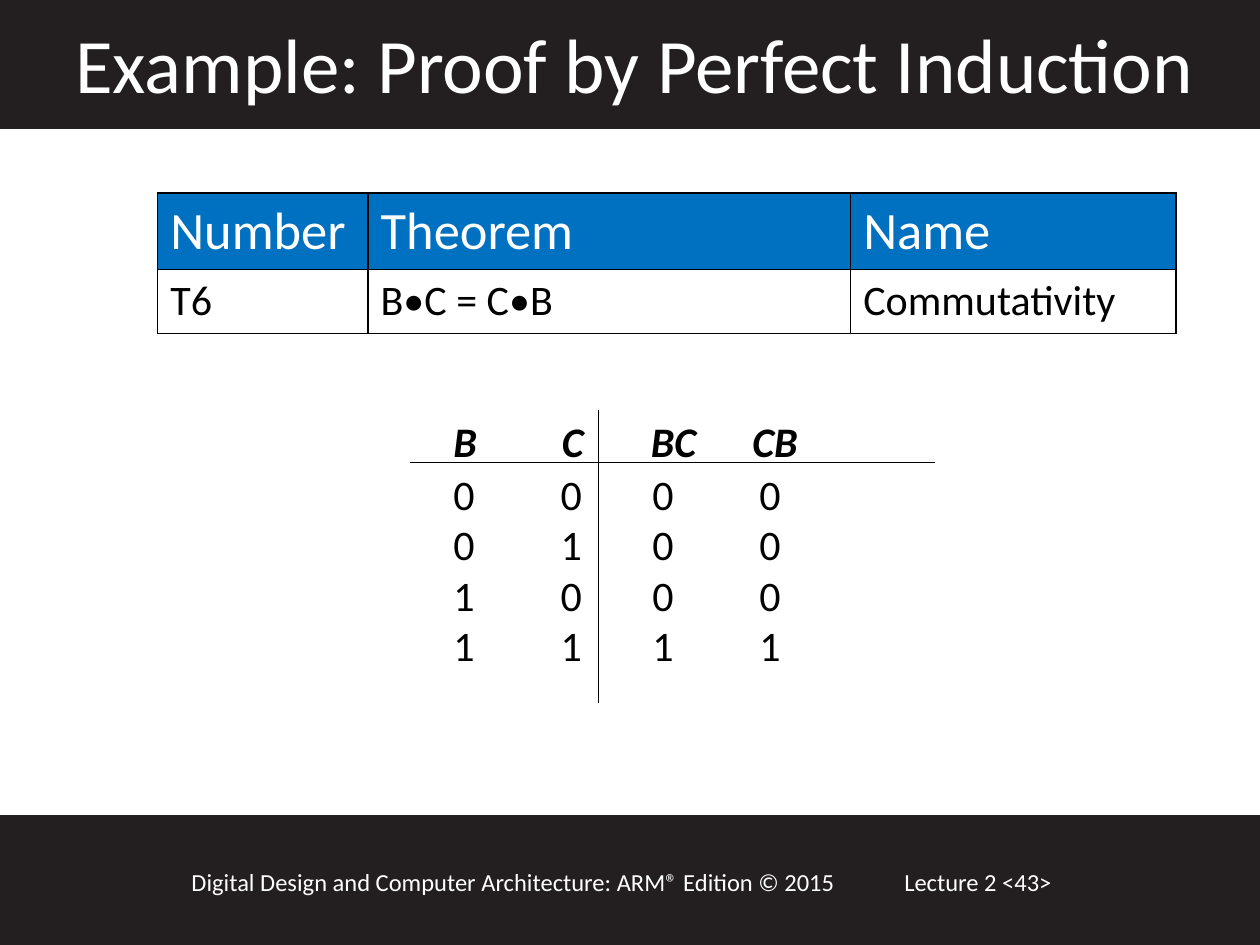
from dataclasses import dataclass

import pptx
import pptx.dml.color
import pptx.enum.shapes
import pptx.oxml.ns
import pptx.util
from lxml import etree

COLORS = {"band": "231F20", "header": "0070C0", "light": "FFFFFF", "ink": "000000"}
FONT = "Calibri"
PAGE_WIDTH, PAGE_HEIGHT = 25.4, 19.05
DIGIT_TABS = (2.16,)
HEADING_TABS = (2.19, 3.98, 6.03)


@dataclass
class Band:
    top: float
    height: float


@dataclass
class Rule:
    left: float
    top: float
    right: float
    bottom: float


@dataclass
class Label:
    left: float
    top: float
    width: float
    height: float
    lines: tuple[str, ...]
    size: float
    color: str = "ink"
    emphasis: bool = False
    tabs: tuple[float, ...] = ()


BANDS = [Band(16.46, 2.59), Band(0, 2.57)]
RULES = [Rule(8.26, 9.32, 18.85, 9.32), Rule(12.07, 8.26, 12.07, 14.17)]
LABELS = [
    Label(17.98, 17.35, 5.51, 0.86, ("Lecture 2 <43>",), 14, "light"),
    Label(3.61, 17.35, 14.6, 0.86,
          ("Digital Design and Computer Architecture: ARM® Edition © 2015",), 14, "light"),
    Label(1.27, 0.2, 24.56, 2.13, ("Example: Proof by Perfect Induction",), 44, "light"),
    Label(8.89, 8.26, 14.81, 1.27, ("B\tC\tBC\tCB",), 24, emphasis=True, tabs=HEADING_TABS),
    Label(8.89, 9.32, 3.18, 4.37, ("0\t0", "0\t1", "1\t0", "1\t1"), 24, tabs=DIGIT_TABS),
    Label(12.9, 9.32, 3.18, 4.37, ("0\t0", "0\t0", "0\t0", "1\t1"), 24, tabs=DIGIT_TABS),
]
THEOREM_ROWS = [("Number", "Theorem", "Name"), ("T6", "B•C = C•B", "Commutativity")]
THEOREM_WIDTHS = (4.24, 9.73, 6.56)
THEOREM_HEIGHTS = (1.52, 1.27)
THEOREM_STYLES = [(30, "light", "header"), (24, "ink", "light")]


def rgb(name: str) -> pptx.dml.color.RGBColor:
    return pptx.dml.color.RGBColor.from_string(COLORS[name])


def add_child(parent, tag: str, **attributes: str):
    return etree.SubElement(parent, pptx.oxml.ns.qn(tag), attributes)


def write_text(para, text: str, *, size: float, color: str, emphasis: bool = False) -> None:
    span = para.add_run()
    span.text = text
    span.font.name = FONT
    span.font.size = pptx.util.Pt(size)
    span.font.color.rgb = rgb(color)
    span.font.bold = span.font.italic = emphasis


def draw_band(page, band: Band) -> None:
    shape = page.shapes.add_shape(
        pptx.enum.shapes.MSO_SHAPE.RECTANGLE, 0, pptx.util.Cm(band.top),
        pptx.util.Cm(PAGE_WIDTH), pptx.util.Cm(band.height))
    shape.shadow.inherit = False
    shape.fill.solid()
    shape.fill.fore_color.rgb = rgb("band")
    shape.line.color.rgb = rgb("band")
    shape.line.width = pptx.util.Pt(2)


def draw_rule(page, rule: Rule) -> None:
    line = page.shapes.add_connector(
        pptx.enum.shapes.MSO_CONNECTOR.STRAIGHT,
        pptx.util.Cm(rule.left), pptx.util.Cm(rule.top),
        pptx.util.Cm(rule.right), pptx.util.Cm(rule.bottom))
    line.line.color.rgb = rgb("ink")
    line.line.width = pptx.util.Pt(0.75)
    add_child(line._element.spPr, "a:effectLst")


def draw_label(page, label: Label) -> None:
    box = page.shapes.add_textbox(
        pptx.util.Cm(label.left), pptx.util.Cm(label.top),
        pptx.util.Cm(label.width), pptx.util.Cm(label.height))
    frame = box.text_frame
    frame.word_wrap = True
    for index, text in enumerate(label.lines):
        para = frame.add_paragraph() if index else frame.paragraphs[0]
        if label.tabs:
            stops = add_child(para._p.get_or_add_pPr(), "a:tabLst")
            for position in label.tabs:
                add_child(stops, "a:tab", pos=str(int(pptx.util.Cm(position))), algn="l")
        write_text(para, text, size=label.size, color=label.color, emphasis=label.emphasis)


def add_borders(cell) -> None:
    properties = cell._tc.get_or_add_tcPr()
    for side in ("a:lnL", "a:lnR", "a:lnT", "a:lnB"):
        border = add_child(properties, side, w=str(int(pptx.util.Pt(1))))
        add_child(add_child(border, "a:solidFill"), "a:srgbClr", val=COLORS["ink"])


def draw_theorems(page) -> None:
    table = page.shapes.add_table(
        len(THEOREM_ROWS), len(THEOREM_WIDTHS), pptx.util.Cm(3.18), pptx.util.Cm(3.89),
        pptx.util.Cm(sum(THEOREM_WIDTHS)), pptx.util.Cm(sum(THEOREM_HEIGHTS))).table
    for column, width in zip(table.columns, THEOREM_WIDTHS):
        column.width = pptx.util.Cm(width)
    for row, height, texts, style in zip(
            table.rows, THEOREM_HEIGHTS, THEOREM_ROWS, THEOREM_STYLES):
        row.height = pptx.util.Cm(height)
        size, color, fill = style
        for cell, text in zip(row.cells, texts):
            add_borders(cell)
            cell.fill.solid()
            cell.fill.fore_color.rgb = rgb(fill)
            write_text(cell.text_frame.paragraphs[0], text, size=size, color=color)


def main() -> None:
    deck = pptx.Presentation()
    deck.slide_width = pptx.util.Cm(PAGE_WIDTH)
    deck.slide_height = pptx.util.Cm(PAGE_HEIGHT)
    page = deck.slides.add_slide(deck.slide_layouts[6])
    for band in BANDS:
        draw_band(page, band)
    for rule in RULES:
        draw_rule(page, rule)
    draw_theorems(page)
    for label in LABELS:
        draw_label(page, label)
    deck.save("out.pptx")


if __name__ == "__main__":
    main()
